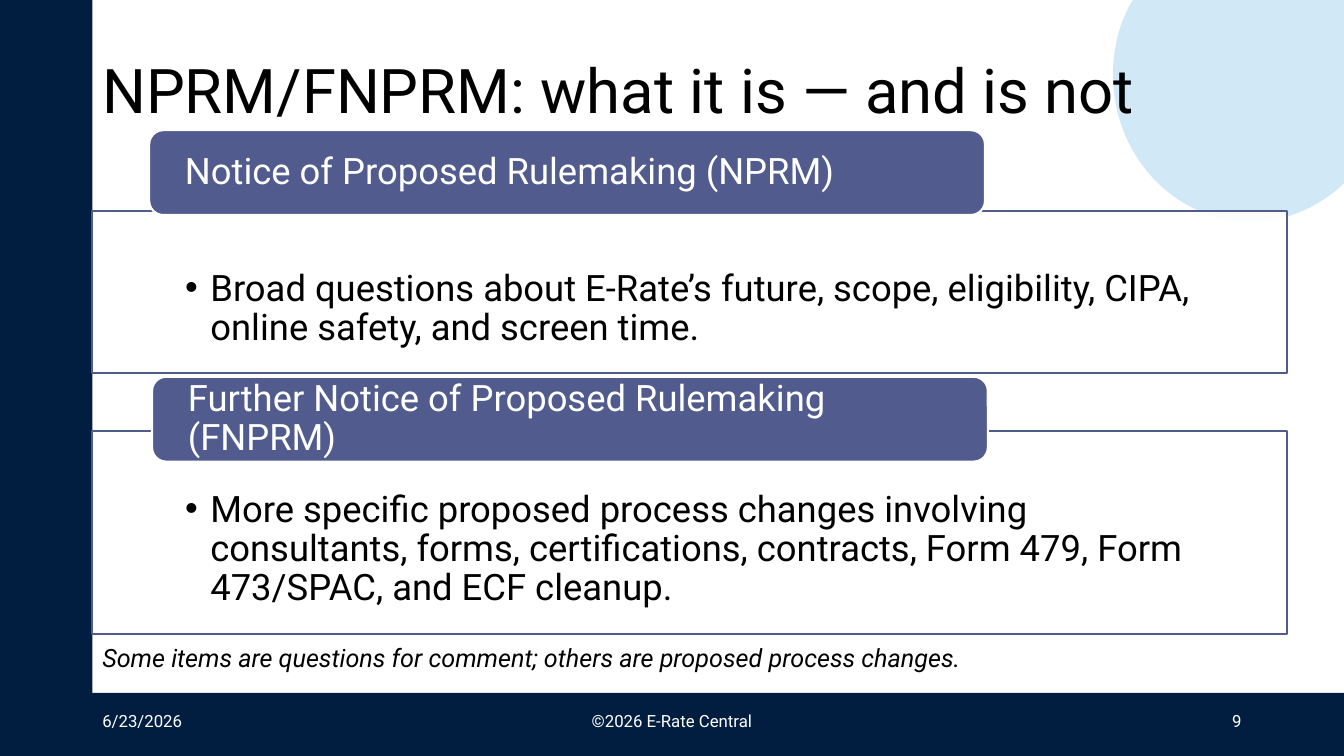
from lxml.etree import SubElement
from pptx import Presentation
from pptx.dml.color import RGBColor as Rgb
from pptx.enum.shapes import MSO_SHAPE as Kind
from pptx.enum.text import MSO_ANCHOR as Anchor, PP_ALIGN as Align
from pptx.oxml.ns import qn
from pptx.util import Inches, Pt

COLS, ROWS = 160, 90
CELL = Inches(1) / 12
HUES = {"navy": "011E40", "sky": "D1E9F7", "plum": "515B8D",
        "white": "FFFFFF", "black": "000000"}
LEFT = 11
FOOT = 82.5
CARD = 142.2
EDGE = 0.5
PAD = (1.2, 0.6, 1.2, 0.6)
SIDES = ("left", "top", "right", "bottom")
CARDS = (
    ("Notice of Proposed Rulemaking (NPRM)",
     "Broad questions about E-Rate’s future, scope, eligibility, CIPA, "
     "online safety, and screen time.",
     (LEFT, 25.1, CARD, 19.3), (17.76, 15.5, 99.5, 10.1)),
    ("Further Notice of Proposed Rulemaking (FNPRM)",
     "More specific proposed process changes involving consultants, forms, "
     "certifications, contracts, Form 479, Form 473/SPAC, and ECF cleanup.",
     (LEFT, 51.34, CARD, 24.2), (18.1, 44.86, 99.5, 10.1)),
)
NOTES = (
    ("6/23/2026", LEFT, 36, Align.LEFT),
    ("©2026 E-Rate Central", 53, 54, Align.CENTER),
    ("9", 113, 36, Align.RIGHT),
)
RIM = ((134.9, 0), (COLS, 0), (COLS, 21.8), (159.5, 22.3))
BENDS = ((156.6, 24.8), (153, 26.4), (149, 26.4),
         (139.9, 26.4), (132.5, 18.6), (132.5, 8.9),
         (132.5, 5.9), (133.2, 3), (134.5, 0.6))


def grid(*cells):
    return [round(n * CELL) for n in cells]


def put(item, **vals):
    for name, val in vals.items():
        setattr(item, name, val)


def paint(shape, fill, line=None):
    shape.shadow.inherit = False
    shape.fill.solid()
    shape.fill.fore_color.rgb = Rgb.from_string(HUES[fill])
    if line:
        shape.line.color.rgb = Rgb.from_string(HUES[line])
        shape.line.width = Pt(1.5)
    else:
        shape.line.fill.background()


def block(slide, box, fill, line=None, kind=Kind.RECTANGLE):
    shape = slide.shapes.add_shape(kind, *grid(*box))
    paint(shape, fill, line)
    return shape


def veil(shape, share):
    hue = shape.fill._xPr.find(qn("a:solidFill"))[0]
    SubElement(hue, qn("a:alpha"), val=str(share * 1000))


def dot(para):
    props = para._p.get_or_add_pPr()
    for name, val in (("marL", 0.25), ("indent", -0.25)):
        props.set(name, str(Inches(val)))
    SubElement(props, qn("a:buFont"), typeface="Arial")
    SubElement(props, qn("a:buChar"), char="•")


def label(slide, box, text, size, hue="black", pad=PAD, anchor=Anchor.MIDDLE,
          align=Align.LEFT, space=1.0, italic=False, mark=False):
    frame = slide.shapes.add_textbox(*grid(*box)).text_frame
    edges = {f"margin_{side}": val for side, val in zip(SIDES, grid(*pad))}
    put(frame, word_wrap=True, vertical_anchor=anchor, **edges)
    para = frame.paragraphs[0]
    put(para, text=text, alignment=align, line_spacing=space)
    if mark:
        dot(para)
    font = para.runs[0].font
    put(font, name="Roboto", size=Pt(size), italic=italic)
    font.color.rgb = Rgb.from_string(HUES[hue])


def disc(slide):
    spots = [grid(*spot) for spot in RIM + BENDS]
    draft = slide.shapes.build_freeform(*spots[0])
    draft.add_line_segments(spots[1:], close=True)
    shape = draft.convert_to_shape()
    legs = list(shape._element.iter(qn("a:lnTo")))[len(RIM) - 1:]
    for n in range(0, len(BENDS), 3):
        curve = legs[n].makeelement(qn("a:cubicBezTo"))
        legs[n].addprevious(curve)
        for leg in legs[n:n + 3]:
            curve.append(leg[0])
            leg.getparent().remove(leg)
    paint(shape, "sky")


def card(slide, head, body, box, tab):
    veil(block(slide, box, "white", "plum"), 90)
    label(slide, box, body, 26, pad=(11.04, 7.1, 11.04, 2.4),
          anchor=Anchor.TOP, space=0.9, mark=True)
    block(slide, tab, "plum", "white", Kind.ROUNDED_RECTANGLE)
    left, top, wide, high = tab
    inner = (left + EDGE, top + EDGE, wide - 2 * EDGE, high - 2 * EDGE)
    label(slide, inner, head, 26, hue="white", pad=(3.76, 0, 3.76, 0), space=0.9)


def main():
    """Build the rulemaking slide and save it."""
    deck = Presentation()
    put(deck, slide_width=round(COLS * CELL), slide_height=round(ROWS * CELL))
    slide = deck.slides.add_slide(deck.slide_layouts[6])
    block(slide, (0, FOOT, COLS, ROWS - FOOT), "navy")
    block(slide, (0, 0, LEFT, ROWS), "navy")
    disc(slide)
    label(slide, (LEFT, 2.4, 138, 17.4), "NPRM/FNPRM: what it is — and is not",
          44, space=0.9)
    for text, left, wide, align in NOTES:
        label(slide, (left, 83.4, wide, 4.8), text, 12, hue="white", align=align)
    for parts in CARDS:
        card(slide, *parts)
    label(slide, (LEFT, 75.9, 119.2, 4.8),
          "Some items are questions for comment; others are proposed process changes.",
          18, anchor=Anchor.TOP, italic=True)
    deck.save("out.pptx")


if __name__ == "__main__":
    main()
